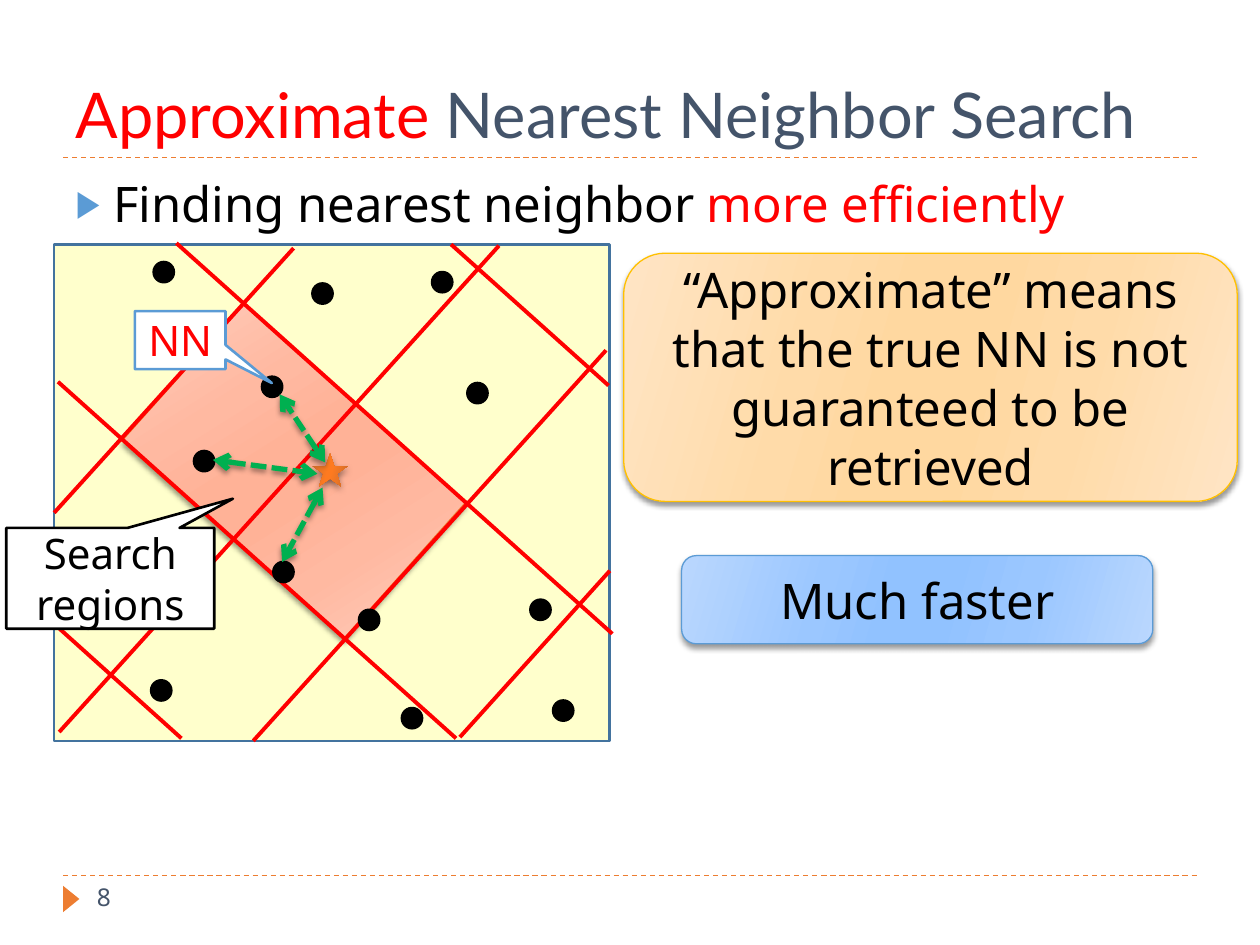
from lxml import etree
from pptx import Presentation
from pptx.dml.color import RGBColor
from pptx.enum.dml import MSO_LINE
from pptx.enum.shapes import MSO_CONNECTOR, MSO_SHAPE
from pptx.enum.text import MSO_ANCHOR, MSO_AUTO_SIZE, PP_ALIGN
from pptx.oxml.ns import qn
from pptx.util import Inches, Pt

STRAIGHT = MSO_CONNECTOR.STRAIGHT
DASH, SHORT_DASH = MSO_LINE.DASH, MSO_LINE.SQUARE_DOT
LEFT, CENTER = PP_ALIGN.LEFT, PP_ALIGN.CENTER
TOP, MIDDLE, BOTTOM = MSO_ANCHOR.TOP, MSO_ANCHOR.MIDDLE, MSO_ANCHOR.BOTTOM
RECT, OVAL, STAR = MSO_SHAPE.RECTANGLE, MSO_SHAPE.OVAL, MSO_SHAPE.STAR_5_POINT
ROUNDED, CALLOUT = MSO_SHAPE.ROUNDED_RECTANGLE, MSO_SHAPE.RECTANGULAR_CALLOUT
TRIANGLE = MSO_SHAPE.ISOSCELES_TRIANGLE

COLORS = {
    "black": "000000", "white": "FFFFFF", "red": "FF0000", "slate": "44546A",
    "orange": "ED7D31", "blue": "5B9BD5", "navy": "43739E", "gold": "FFC000",
    "green": "00B050", "cream": "FFFFCC",
}
GRADIENTS = {
    "salmon": ("FFCDBE", "FFB9A1", "FFB297"),
    "flame": ("C26628", "EB7626", "FE7A20"),
    "sky": ("BAD7FE", "9BC7FF", "91C2FF"),
    "peach": ("FFE5C5", "FFDBA9", "FFD8A0"),
}
STOPS = (0, 30, 45, 55, 73, 100)

DOTS = [(0.79, 0.14), (2.05, 0.31), (3.0, 0.22), (3.78, 2.82), (1.11, 1.64), (2.76, 3.68),
        (3.96, 3.62), (0.77, 3.46), (1.65, 1.05), (3.28, 1.1), (2.42, 2.9), (1.74, 2.52)]
BOUNDARIES = [(3.22, 3.91, 4.41, 2.59), (1.58, 3.94, 4.38, 0.84), (0.04, 3.87, 3.53, 0.01),
              (0, 2.13, 1.9, 0.03), (0.97, -0.01, 4.43, 3.09), (0.03, 1.09, 3.19, 3.92),
              (0.02, 3.03, 1.01, 3.92), (3.15, 0, 4.4, 1.12)]
DISTANCES = [(2.15, 1.73, 1.79, 1.19), (1.26, 1.71, 2.09, 1.82), (2.13, 1.93, 1.81, 2.52)]


def rgb(name):
    return RGBColor.from_string(COLORS[name])


def add_node(parent, tag, **values):
    return etree.SubElement(parent, qn(tag), {key: str(value) for key, value in values.items()})


def add_shadow(effects, opacity=40, blur=3):
    outer = add_node(effects, "a:outerShdw", blurRad=Pt(blur), dist=Pt(2), dir=90 * 60000,
                     rotWithShape=0)
    color = add_node(outer, "a:srgbClr", val=COLORS["black"])
    add_node(color, "a:alpha", val=opacity * 1000)


def fill_gradient(shape, name):
    shape.fill.gradient()
    gradient = shape._element.spPr.find(qn("a:gradFill"))
    for child in list(gradient):
        gradient.remove(child)
    stops = add_node(gradient, "a:gsLst")
    shades = GRADIENTS[name]
    for position, shade in zip(STOPS, shades + shades[::-1]):
        add_node(add_node(stops, "a:gs", pos=position * 1000), "a:srgbClr", val=shade)
    add_node(gradient, "a:lin", ang=16 * 60000, scaled=0)


def add_box(page, kind, box, fill, line=None, width=1.5, shadow=None):
    shape = page.shapes.add_shape(kind, *map(Inches, box))
    if fill in GRADIENTS:
        fill_gradient(shape, fill)
    else:
        shape.fill.solid()
        shape.fill.fore_color.rgb = rgb(fill)
    if line:
        shape.line.color.rgb = rgb(line)
        shape.line.width = Pt(width)
    else:
        shape.line.fill.background()
    shape.shadow.inherit = False
    if shadow:
        add_shadow(shape._element.spPr.find(qn("a:effectLst")), *shadow)
    return shape


def add_line(page, ends, color, width, dash=None, arrows=False):
    line = page.shapes.add_connector(STRAIGHT, *map(Inches, ends))
    line.line.color.rgb = rgb(color)
    line.line.width = Pt(width)
    if dash:
        line.line.dash_style = dash
    effects = add_node(line._element.spPr, "a:effectLst")
    if arrows:
        for tag in ("a:headEnd", "a:tailEnd"):
            add_node(line.line._get_or_add_ln(), tag, type="arrow")
        add_shadow(effects)


def write(shape, spans, size, font="Noto Sans", align=CENTER, anchor=MIDDLE):
    frame = shape.text_frame
    settings = {"word_wrap": True, "auto_size": MSO_AUTO_SIZE.NONE, "vertical_anchor": anchor}
    for key, value in settings.items():
        setattr(frame, key, value)
    para = frame.paragraphs[0]
    para.alignment = align
    for text, color in spans:
        span = para.add_run()
        span.text = text
        for key, value in {"name": font, "size": Pt(size), "bold": False}.items():
            setattr(span.font, key, value)
        span.font.color.rgb = rgb(color)
    return para


def place(shape, box):
    for key, value in zip(("left", "top", "width", "height"), box):
        setattr(shape, key, Inches(value))


def build_heading(page, box):
    left, top, width, height = box
    add_line(page, (left, top + height, left + width, top + height), "orange", 0.75, DASH)
    title = page.shapes.title
    place(title, box)
    write(title, [("Approximate", "red"), (" Nearest Neighbor Search", "slate")],
          36, "Lato", LEFT, BOTTOM)


def build_body(page, box):
    body = page.placeholders[1]
    place(body, box)
    para = write(body, [("Finding nearest neighbor ", "black"), ("more efficiently", "red")],
                 28, align=LEFT, anchor=TOP)
    para.space_before = Pt(6)
    properties = para._p.get_or_add_pPr()
    properties.set("marL", str(Inches(0.3)))
    properties.set("indent", str(-Inches(0.3)))
    add_node(add_node(properties, "a:buClr"), "a:srgbClr", val=COLORS["blue"])
    add_node(properties, "a:buSzPct", val=76000)
    add_node(properties, "a:buChar", char="▶")


def build_footer(page, box):
    left, top, width, height = box
    add_line(page, (left, top, left + width, top), "orange", 0.75, DASH)
    marker = add_box(page, TRIANGLE, (left - 0.04, top + 0.12, 0.21, 0.13), "orange")
    marker.rotation = 90
    number = page.shapes.add_textbox(*map(Inches, (left + 0.17, top, 2.17, height)))
    write(number, [("8", "slate")], 14, align=LEFT, anchor=TOP)


def build_map(page, box):
    left, top = box[:2]

    def inside(x, y, *rest):
        return (left + x, top + y, *rest)

    def between(x1, y1, x2, y2):
        return (left + x1, top + y1, left + x2, top + y2)

    add_box(page, RECT, box, "cream", "navy")
    region = add_box(page, RECT, inside(0.72, 1.08, 2.36, 1.45), "salmon", "orange", 0.75, (40, 3))
    region.rotation = 41.8
    add_box(page, STAR, inside(2.05, 1.66, 0.28, 0.26), "flame", shadow=(50, 4))
    for ends in BOUNDARIES:
        add_line(page, between(*ends), "red", 2.25)
    for x, y in DOTS:
        add_box(page, OVAL, inside(x, y, 0.16, 0.16), "black", "black")
    callouts = [
        ("NN", inside(0.64, 0.53, 0.72, 0.46), "blue", "red", (1.01, 0.74)),
        ("Search regions", inside(-0.38, 2.25, 1.65, 0.8), "black", "black", (0.59, -0.79)),
    ]
    for text, place_box, line, color, tip in callouts:
        callout = add_box(page, CALLOUT, place_box, "white", line)
        for index, value in enumerate(tip):
            callout.adjustments[index] = value
        write(callout, [(text, color)], 24)
    for ends in DISTANCES:
        add_line(page, between(*ends), "green", 3, SHORT_DASH, arrows=True)


def build_note(page, box, text, fill, line):
    note = add_box(page, ROUNDED, box, fill, line, 0.75, (40, 3))
    write(note, [(text, "black")], 28)


def main():
    deck = Presentation()
    deck.slide_width, deck.slide_height = Inches(10), Inches(7.5)
    page = deck.slides.add_slide(deck.slide_layouts[1])
    build_heading(page, (0.5, 0.17, 9, 1.08))
    build_body(page, (0.5, 1.33, 9, 5.4))
    build_footer(page, (0.5, 6.95, 9, 0.4))
    build_map(page, (0.43, 1.94, 4.41, 3.94))
    build_note(page, (5.41, 4.41, 3.74, 0.7), "Much faster", "sky", "blue")
    build_note(page, (4.95, 2.01, 4.87, 1.97),
               "“Approximate” means that the true NN is not guaranteed to be retrieved",
               "peach", "gold")
    deck.save("out.pptx")


if __name__ == "__main__":
    main()
